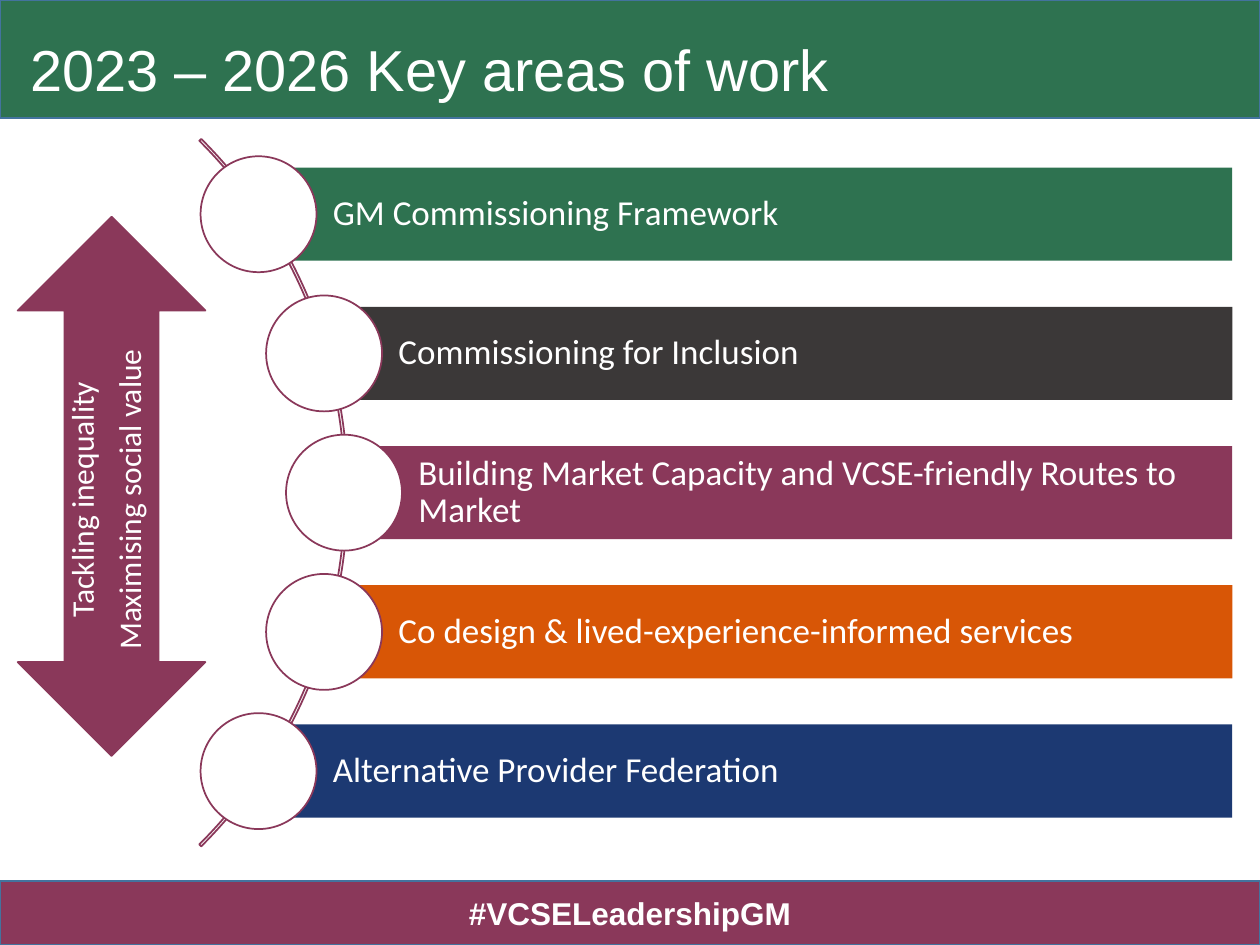
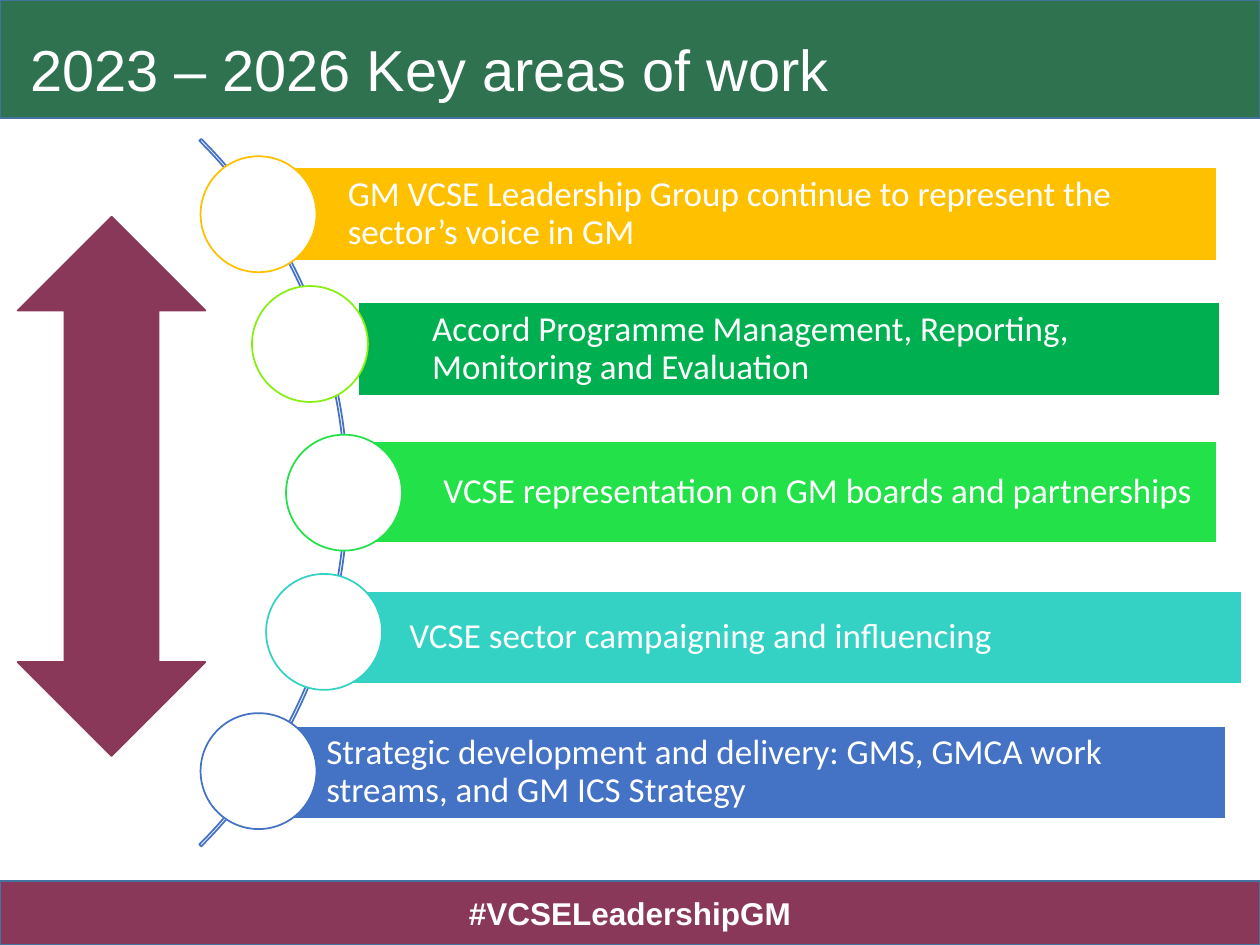
"""Builds two slides on the key areas of work for 2023 – 2026."""
import math

from pptx import Presentation
from pptx.dml.color import RGBColor
from pptx.enum.shapes import MSO_SHAPE
from pptx.enum.text import MSO_ANCHOR, PP_ALIGN
from pptx.util import Inches, Pt

RECTANGLE, OVAL = MSO_SHAPE.RECTANGLE, MSO_SHAPE.OVAL
ARC, ARROW = MSO_SHAPE.BLOCK_ARC, MSO_SHAPE.UP_DOWN_ARROW
LEFT, CENTRE = PP_ALIGN.LEFT, PP_ALIGN.CENTER
TOP, MIDDLE = MSO_ANCHOR.TOP, MSO_ANCHOR.MIDDLE

COLOURS = {
    "white": "FFFFFF", "forest": "2E7250", "plum": "8A385A", "edge": "43739E",
    "charcoal": "3B3838", "orange": "D85606", "navy": "1C3972",
    "amber": "FFC000", "green": "00B050", "lime": "86F011",
    "bright": "23E148", "turquoise": "33D2C5", "blue": "4472C4",
}
COLUMNS, ROWS = 100, 75
CELL = Inches(0.1)
ARC_X, ARC_Y, ARC_RADIUS = -12.1, 39.1, 39.7
CIRCLE_SIZE, CIRCLE_RADIUS, CIRCLE_PITCH = 9.2, 39.4, 11.05
BAR_HEIGHT, BAR_RIGHT = 7.4, 97.8
BAR_INSETS = (5.9, 0.6, 0.6, 0.6)
BOX_INSETS = (1, 0.5, 1, 0.5)


def circle_centre(index):
    """Return the column and row where a circle sits on the arc."""
    rise = (index - 2) * CIRCLE_PITCH
    return ARC_X + math.sqrt(CIRCLE_RADIUS ** 2 - rise ** 2), ARC_Y + rise


class Deck:
    """Holds the shared style and the current slide."""

    def __init__(self):
        """Start an empty presentation sized to the grid."""
        self.presentation = Presentation()
        self.presentation.slide_width = COLUMNS * CELL
        self.presentation.slide_height = ROWS * CELL
        self.slide = None

    def box(self, *frame):
        """Turn grid cells into slide lengths."""
        return [round(cells * CELL) for cells in frame]

    def new_slide(self, title):
        """Add a slide with its title band and footer band."""
        layout = self.presentation.slide_layouts[6]
        self.slide = self.presentation.slides.add_slide(layout)
        self.shape(RECTANGLE, (0, 0, COLUMNS, 9.4), "forest", "edge")
        footer = self.shape(RECTANGLE, (0, 69.9, COLUMNS, 5.1), "plum", "edge")
        self.fill_text(footer, ["#VCSELeadershipGM"], 18, "Arial", CENTRE, bold=True)
        self.text((1.4, 0, 89.2, 11.6), [title], 33, "Arial")

    def shape(self, kind, frame, fill=None, line=None):
        """Add a preset shape without a shadow."""
        shape = self.slide.shapes.add_shape(kind, *self.box(*frame))
        shape.shadow.inherit = False
        if fill:
            shape.fill.solid()
            shape.fill.fore_color.rgb = RGBColor.from_string(COLOURS[fill])
        else:
            shape.fill.background()
        if line:
            shape.line.color.rgb = RGBColor.from_string(COLOURS[line])
            shape.line.width = Pt(1)
        else:
            shape.line.fill.background()
        return shape

    def text(self, frame, lines, size, font, align=LEFT, anchor=MIDDLE, rotation=0):
        """Add a text box."""
        shape = self.slide.shapes.add_textbox(*self.box(*frame))
        shape.rotation = rotation
        self.fill_text(shape, lines, size, font, align, anchor, spacing=0.9)

    def fill_text(self, shape, lines, size, font, align=LEFT, anchor=MIDDLE,
                  insets=BOX_INSETS, spacing=1.0, bold=False):
        """Fill a shape with white paragraphs."""
        frame = shape.text_frame
        frame.word_wrap = True
        frame.vertical_anchor = anchor
        (frame.margin_left, frame.margin_top,
         frame.margin_right, frame.margin_bottom) = self.box(*insets)
        for index, line in enumerate(lines):
            paragraph = frame.add_paragraph() if index else frame.paragraphs[0]
            paragraph.alignment = align
            paragraph.line_spacing = spacing
            if index:
                paragraph.space_before = Pt(7.5)
            run = paragraph.add_run()
            run.text = line
            run.font.name = font
            run.font.size = Pt(size)
            run.font.bold = bold
            run.font.color.rgb = RGBColor.from_string(COLOURS["white"])

    def arc(self, line):
        """Add the thin arc that links the circles."""
        frame = (ARC_X - ARC_RADIUS, ARC_Y - ARC_RADIUS, 2 * ARC_RADIUS, 2 * ARC_RADIUS)
        arc = self.shape(ARC, frame, line=line)
        for index, value in enumerate((189, 27, 0.0027)):
            arc.adjustments[index] = value

    def bar(self, label, frame, fill, line=None):
        """Add a labelled bar for one area of work."""
        bar = self.shape(RECTANGLE, frame, fill, line)
        self.fill_text(bar, [label], 20, "Calibri", insets=BAR_INSETS, spacing=0.9)

    def circle(self, centre, line):
        """Add a white circle around a centre."""
        left, top = (middle - CIRCLE_SIZE / 2 for middle in centre)
        self.shape(OVAL, (left, top, CIRCLE_SIZE, CIRCLE_SIZE), "white", line)

    def arrow(self):
        """Add the tall double arrow on the left."""
        self.shape(ARROW, (1.4, 17.2, 14.9, 42.8), "plum", "plum")


COMMISSIONING_AREAS = [
    ("GM Commissioning Framework", "forest"),
    ("Commissioning for Inclusion", "charcoal"),
    ("Building Market Capacity and VCSE-friendly Routes to Market", "plum"),
    ("Co design & lived-experience-informed services", "orange"),
    ("Alternative Provider Federation", "navy"),
]
LEADERSHIP_AREAS = [
    ("GM VCSE Leadership Group continue to represent the sector’s voice in GM",
     "amber", "amber", (21.7, 13.3, 74.9, BAR_HEIGHT)),
    ("Accord Programme Management, Reporting, Monitoring and Evaluation",
     "green", "lime", (28.4, 24, 68.4, BAR_HEIGHT)),
    ("VCSE representation on GM boards and partnerships",
     "bright", "bright", (29.3, 35, 67.3, 8.1)),
    ("VCSE sector campaigning and influencing",
     "turquoise", "turquoise", (26.6, 46.9, 72, BAR_HEIGHT)),
    ("Strategic development and delivery: GMS, GMCA work streams, and GM ICS Strategy",
     "blue", "blue", (20, 57.6, 77.3, BAR_HEIGHT)),
]
SHIFTED_CENTRES = {1: (24.6, 27.3)}
TITLE = "2023 – 2026 Key areas of work"


def main():
    """Build both slides and save them."""
    deck = Deck()

    deck.new_slide(TITLE)
    deck.arc("plum")
    for index, (label, fill) in enumerate(COMMISSIONING_AREAS):
        column, row = circle_centre(index)
        frame = (column, row - BAR_HEIGHT / 2, BAR_RIGHT - column, BAR_HEIGHT)
        deck.bar(label, frame, fill)
        deck.circle((column, row), "plum")
    deck.arrow()
    deck.text((-4.2, 35.6, 26.1, 8.1), ["Tackling inequality", "Maximising social value"],
              18, "Calibri", CENTRE, TOP, rotation=270)

    deck.new_slide(TITLE)
    deck.arc("blue")
    for index, (label, fill, outline, frame) in enumerate(LEADERSHIP_AREAS):
        deck.bar(label, frame, fill, "white")
        deck.circle(SHIFTED_CENTRES.get(index, circle_centre(index)), outline)
    deck.arrow()

    deck.presentation.save("out.pptx")


if __name__ == "__main__":
    main()
